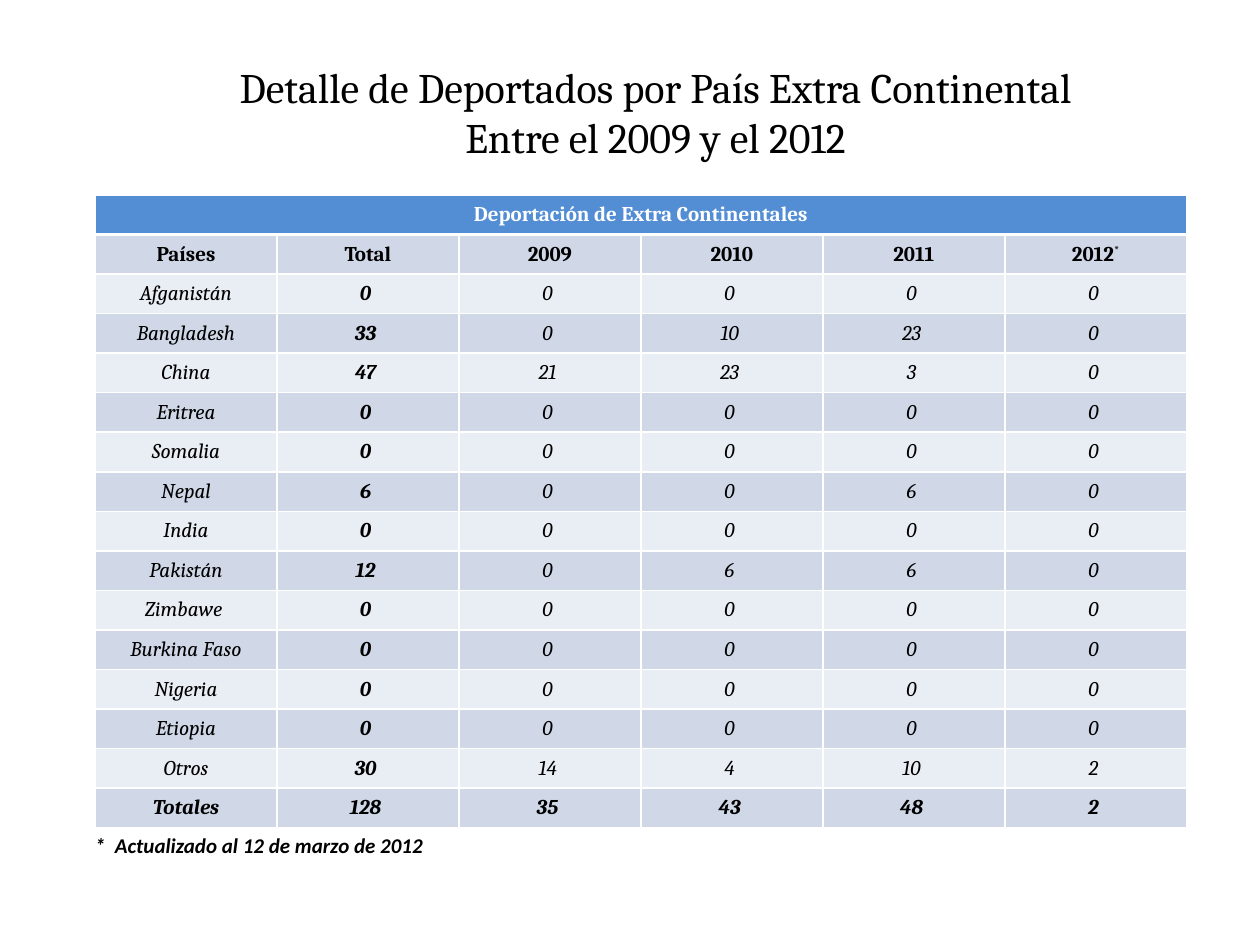
"""Build the slide on deportees by country outside the continent."""
from typing import NamedTuple, Optional

from lxml.etree import SubElement
from pptx import Presentation
from pptx.dml.color import RGBColor
from pptx.enum.text import MSO_ANCHOR, MSO_AUTO_SIZE, PP_ALIGN
from pptx.oxml.ns import qn
from pptx.util import Emu, Pt

BLACK = RGBColor(0x00, 0x00, 0x00)
WHITE = RGBColor(0xFF, 0xFF, 0xFF)
BLUE = RGBColor(0x53, 0x8E, 0xD5)
DARK_BAND = RGBColor(0xD0, 0xD8, 0xE8)
LIGHT_BAND = RGBColor(0xE9, 0xED, 0xF4)

PX = 914400 / 126
LEFT, TOP, COL_W = 95, 195, 182
BODY_H, NOTE_H = 633, 32

TITLE = "Detalle de Deportados por País Extra Continental\nEntre el 2009 y el 2012"
BANNER = "Deportación de Extra Continentales"
NOTE = "*  Actualizado al 12 de marzo de 2012"
HEADINGS = ("Países", "Total", "2009", "2010", "2011", "2012")


class Country(NamedTuple):
    name: str
    counts: tuple[int, ...]


class Style(NamedTuple):
    color: RGBColor = BLACK
    fill: Optional[RGBColor] = None
    bold: bool = False
    italic: bool = False
    font: str = "Cambria"
    size: int = 12
    align: PP_ALIGN = PP_ALIGN.CENTER
    anchor: MSO_ANCHOR = MSO_ANCHOR.MIDDLE


COUNTRIES = (
    Country("Afganistán", (0, 0, 0, 0, 0)),
    Country("Bangladesh", (33, 0, 10, 23, 0)),
    Country("China", (47, 21, 23, 3, 0)),
    Country("Eritrea", (0, 0, 0, 0, 0)),
    Country("Somalia", (0, 0, 0, 0, 0)),
    Country("Nepal", (6, 0, 0, 6, 0)),
    Country("India", (0, 0, 0, 0, 0)),
    Country("Pakistán", (12, 0, 6, 6, 0)),
    Country("Zimbawe ", (0, 0, 0, 0, 0)),
    Country("Burkina Faso", (0, 0, 0, 0, 0)),
    Country("Nigeria", (0, 0, 0, 0, 0)),
    Country("Etiopia", (0, 0, 0, 0, 0)),
    Country("Otros", (30, 14, 4, 10, 2)),
    Country("Totales", (128, 35, 43, 48, 2)),
)


def px(n: float) -> Emu:
    return Emu(round(n * PX))


def format_text(tf, style: Style) -> None:
    for p in tf.paragraphs:
        p.alignment = style.align
        for r in p.runs:
            f = r.font
            f.name, f.size = style.font, Pt(style.size)
            f.bold, f.italic = style.bold, style.italic
            f.color.rgb = style.color


def add_border(cell, side: str, width: float) -> None:
    ln = SubElement(cell._tc.get_or_add_tcPr(), qn(f"a:ln{side}"), w=str(Pt(width)))
    SubElement(SubElement(ln, qn("a:solidFill")), qn("a:srgbClr"), val=str(WHITE))


def format_cell(cell, text: str, style: Style, borders: dict[str, float]) -> None:
    cell.margin_left = cell.margin_right = cell.margin_top = cell.margin_bottom = 0
    cell.vertical_anchor = style.anchor
    for side, width in borders.items():
        add_border(cell, side, width)
    if style.fill is None:
        cell.fill.background()
    else:
        cell.fill.solid()
        cell.fill.fore_color.rgb = style.fill
    tf = cell.text_frame
    if text:
        tf.text = text
        format_text(tf, style)
    else:
        SubElement(tf.paragraphs[0]._p, qn("a:endParaRPr"), sz=str(style.size * 100))


def add_title(s) -> None:
    sp = s.shapes.title
    sp.left, sp.top, sp.width, sp.height = px(181), px(55), px(949), px(115)
    tf = sp.text_frame
    tf.text = TITLE
    tf.word_wrap = False
    tf.auto_size = MSO_AUTO_SIZE.SHAPE_TO_FIT_TEXT
    tf.vertical_anchor = MSO_ANCHOR.TOP
    format_text(tf, Style(size=24))


def add_star(cell, style: Style) -> None:
    r = cell.text_frame.paragraphs[0].add_run()
    r.text = "*"
    format_text(cell.text_frame, style)
    r.font._element.set("baseline", "30000")


def add_deportee_table(s) -> None:
    cols, rows = len(HEADINGS), len(COUNTRIES) + 3
    note = rows - 1
    tbl = s.shapes.add_table(rows, cols, px(LEFT), px(TOP),
                             px(COL_W * cols), px(BODY_H + NOTE_H)).table
    tbl.first_row = tbl.horz_banding = False
    for col in tbl.columns:
        col.width = px(COL_W)
    for row in tbl.rows:
        row.height = px(BODY_H / note)
    tbl.rows[note].height = px(NOTE_H)

    banner = Style(WHITE, BLUE, bold=True)
    heading = Style(fill=DARK_BAND, bold=True)
    footnote = Style(bold=True, italic=True, font="Calibri",
                     align=PP_ALIGN.LEFT, anchor=MSO_ANCHOR.BOTTOM)
    sides = {"L": 1, "R": 1, "T": 1, "B": 1}
    for c, label in enumerate(HEADINGS):
        format_cell(tbl.cell(0, c), "" if c else BANNER, banner, sides | {"B": 1.5})
        format_cell(tbl.cell(1, c), label, heading, sides | {"T": 1.5})
        format_cell(tbl.cell(note, c), "" if c else NOTE, footnote, {"T": 1})
    add_star(tbl.cell(1, cols - 1), heading)

    for i, country in enumerate(COUNTRIES):
        texts = (country.name, *(f"{n} " for n in country.counts))
        for c, text in enumerate(texts):
            style = Style(fill=DARK_BAND if i % 2 else LIGHT_BAND, italic=True,
                          bold=c == 1 or country is COUNTRIES[-1])
            format_cell(tbl.cell(i + 2, c), text, style, sides)

    tbl.cell(0, 0).merge(tbl.cell(0, cols - 1))
    tbl.cell(note, 0).merge(tbl.cell(note, 1))


def main() -> None:
    prs = Presentation()
    prs.slide_width, prs.slide_height = px(1260), px(945)
    s = prs.slides.add_slide(prs.slide_layouts[5])
    add_title(s)
    add_deportee_table(s)
    prs.save("out.pptx")


if __name__ == "__main__":
    main()
